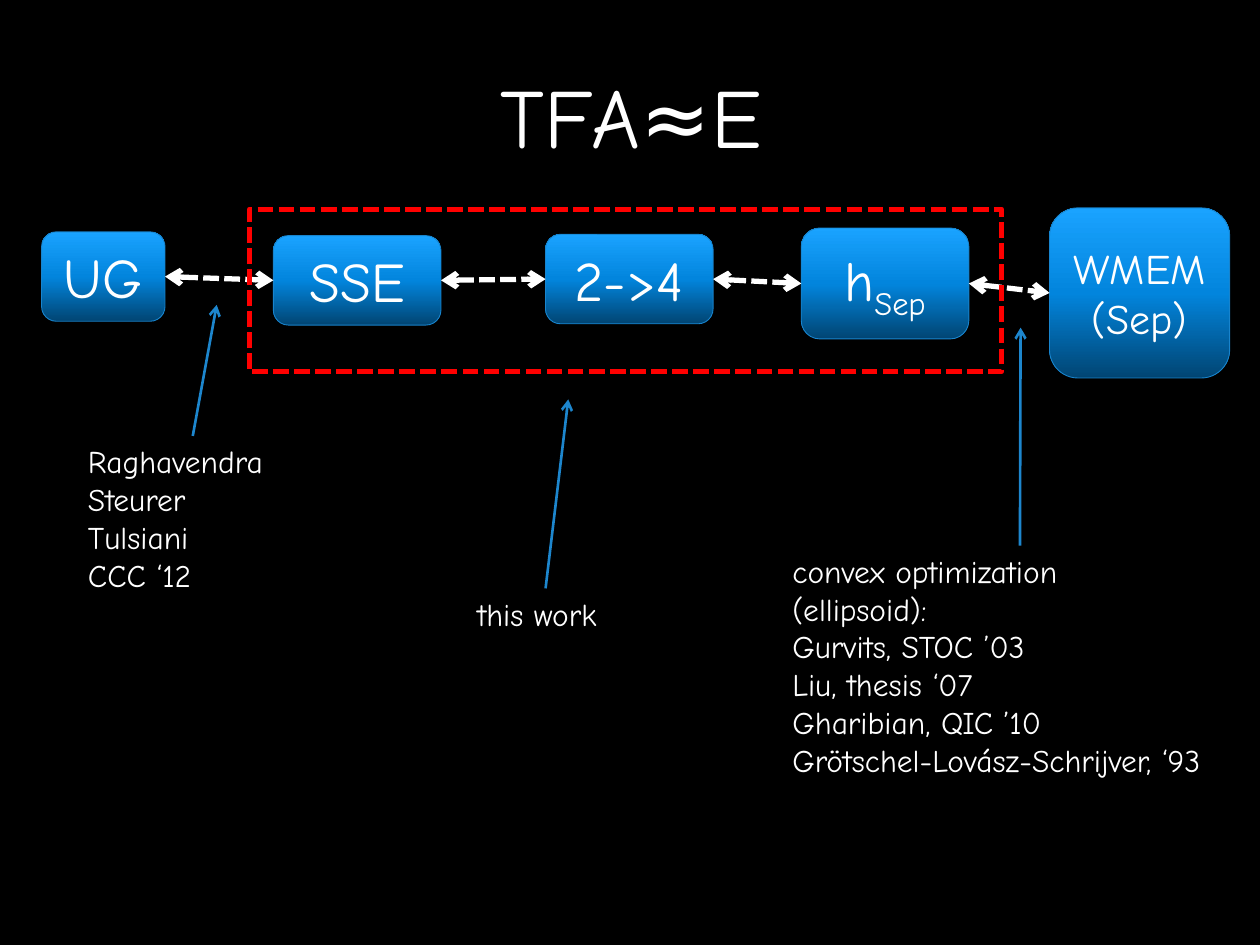
"""Build the slide on a chain of equivalent problems, on a grid of 100 columns by 75 rows."""
import copy
import itertools
import pptx
import pptx.dml.color
import pptx.enum.dml
import pptx.enum.shapes
import pptx.enum.text
import pptx.oxml.ns
import pptx.util

TITLE = ("TFA≈E", (7.6, 1.3, 85, 15.6))
NODES = [
    ("UG", "", "large", (3.3, 18.4, 9.8, 7.1)),
    ("SSE", "", "large", (21.7, 18.7, 13.3, 7.1)),
    ("2->4", "", "large", (43.3, 18.6, 13.3, 7.1)),
    ("h", "Sep", "large", (63.6, 18.1, 13.3, 8.8)),
    ("WMEM(Sep)", "", "medium", (83.3, 16.5, 14.3, 13.5)),
]
NOTES = [
    (["Raghavendra", "Steurer", "Tulsiani", "CCC ‘12"],
     (6, 34.6, 18.6, 13.1), (17.2, 24.2), True),
    (["convex optimization", "(ellipsoid):", "Gurvits, STOC ’03", "Liu, thesis ‘07",
      "Gharibian, QIC ’10", "Grötschel-Lovász-Schrijver, ‘93"],
     (61.9, 43.3, 38.1, 19.2), (81, 26), False),
    (["this work"], (36.9, 46.7, 12.8, 4), (45.1, 31.7), True),
]
FRAME = (19.8, 16.6, 59.7, 12.9)
THEME = {
    "font": "Comic Neue",
    "title": 48, "large": 32, "medium": 24, "small": 18,
    "back": "000000", "text": "FFFFFF", "edge": "1884CD",
    "arrow": "1D86CD", "frame": "FF0000",
    "shade": [(0, "014573"), (0.5, "0285DD"), (1, "1AA3FF")],
}
SHAPE = pptx.enum.shapes.MSO_SHAPE
DASH = pptx.enum.dml.MSO_LINE.SQUARE_DOT
ALIGN = pptx.enum.text.PP_ALIGN
MIDDLE = pptx.enum.text.MSO_ANCHOR.MIDDLE


def grid(cells):
    return [pptx.util.Inches(cell / 10) for cell in cells]


def tint(name):
    return pptx.dml.color.RGBColor.from_string(THEME.get(name, name))


def style(para, size, align):
    para.alignment = align
    para.font.name = THEME["font"]
    para.font.size = pptx.util.Pt(THEME[size])
    para.font.color.rgb = tint("text")


def stroke(line, color, width, dash=None):
    line.color.rgb = tint(color)
    line.width = pptx.util.Pt(width)
    if dash:
        line.dash_style = dash


def add(parent, tag, **attrs):
    child = parent.makeelement(pptx.oxml.ns.qn(tag), attrs)
    parent.append(child)


def shade(shape):
    fill = shape.fill
    fill.gradient()
    fill.gradient_angle = 90
    stops = next(shape._element.spPr.iter(pptx.oxml.ns.qn("a:gsLst")))
    stops.append(copy.deepcopy(stops[0]))
    for stop, (place, color) in zip(fill.gradient_stops, THEME["shade"]):
        stop.position = place
        stop.color.rgb = tint(color)


def node(slide, text, sub, size, cells):
    shape = slide.shapes.add_shape(SHAPE.ROUNDED_RECTANGLE, *grid(cells))
    shape.shadow.inherit = False
    shade(shape)
    stroke(shape.line, "edge", 0.5)
    frame = shape.text_frame
    frame.word_wrap = True
    frame.vertical_anchor = MIDDLE
    para = frame.paragraphs[0]
    para.text = text
    if sub:
        run = para.add_run()
        run.text = sub
        run._r.get_or_add_rPr().set("baseline", "-25000")
    style(para, size, ALIGN.CENTER)
    return shape


def arrow(slide, start, side, end, color, width, ends, dash=None):
    kind = pptx.enum.shapes.MSO_CONNECTOR.STRAIGHT
    line = slide.shapes.add_connector(kind, 0, 0, *end)
    line.begin_connect(start, side)
    stroke(line.line, color, width, dash)
    for tag in ends:
        add(line.line._get_or_add_ln(), tag, type="arrow")
    add(line._element.spPr, "a:effectLst")
    return line


def note(slide, lines, cells, tip, wrap):
    box = slide.shapes.add_textbox(*grid(cells))
    frame = box.text_frame
    frame.word_wrap = wrap
    frame.auto_size = pptx.enum.text.MSO_AUTO_SIZE.SHAPE_TO_FIT_TEXT
    para = frame.paragraphs[0]
    para.text = "\v".join(lines)
    style(para, "small", ALIGN.LEFT)
    arrow(slide, box, 0, grid(tip), "arrow", 1.5, ["a:tailEnd"])


def main():
    deck = pptx.Presentation()
    deck.slide_width, deck.slide_height = grid((100, 75))
    slide = deck.slides.add_slide(deck.slide_layouts[5])
    slide.background.fill.solid()
    slide.background.fill.fore_color.rgb = tint("back")

    text, cells = TITLE
    title = slide.shapes.title
    title.left, title.top, title.width, title.height = grid(cells)
    title.text_frame.text = text
    title.text_frame.vertical_anchor = MIDDLE
    style(title.text_frame.paragraphs[0], "title", ALIGN.CENTER)

    chain = [node(slide, *item) for item in NODES]
    for left, right in itertools.pairwise(chain):
        line = arrow(slide, left, 3, (right.left, right.top), "text", 3,
                     ["a:headEnd", "a:tailEnd"], DASH)
        line.end_connect(right, 1)

    for item in NOTES:
        note(slide, *item)

    frame = slide.shapes.add_shape(SHAPE.RECTANGLE, *grid(FRAME))
    frame.shadow.inherit = False
    frame.fill.background()
    stroke(frame.line, "frame", 3, DASH)
    deck.save("out.pptx")


if __name__ == "__main__":
    main()
